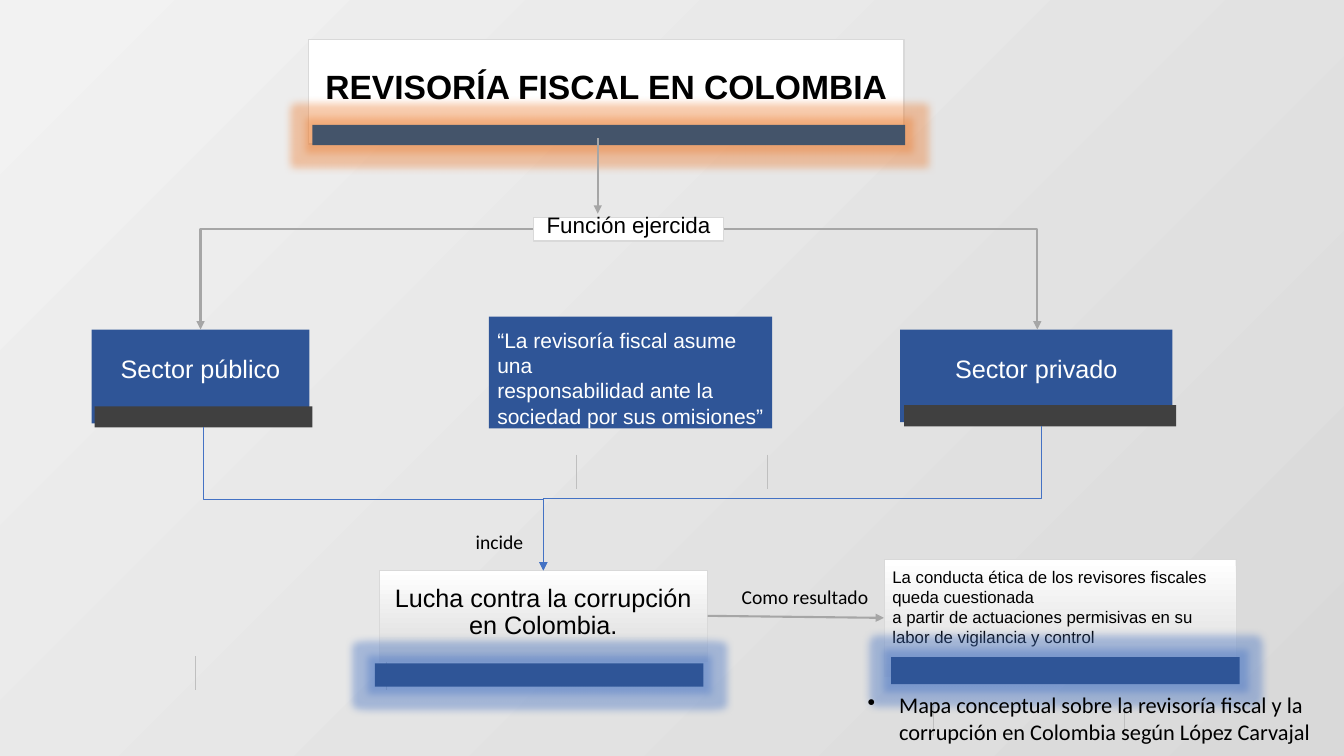
"""Concept map of statutory auditing and corruption in Colombia."""
from dataclasses import dataclass
from math import copysign
from typing import Optional

from lxml import etree
from pptx import Presentation
from pptx.dml import color as dml
from pptx.enum import shapes as kinds, text as txt
from pptx.oxml import ns
from pptx.util import Pt


@dataclass(frozen=True)
class Theme:
    white: str = "FFFFFF"
    black: str = "000000"
    pale: str = "D9D9D9"
    light: str = "F2F2F2"
    tick: str = "BFBFBF"
    arrow: str = "A6A6A6"
    blue: str = "2F5597"
    accent: str = "4472C4"
    orange: str = "ED7D31"
    slate: str = "44546A"
    dark: str = "404040"
    heading: str = "Arial"
    body: str = "Calibri"
    title_size: float = 24
    box_size: float = 18
    label_size: float = 16
    quote_size: float = 15
    note_size: float = 14
    detail_size: float = 12


THEME = Theme()


@dataclass(frozen=True)
class Box:
    place: tuple[float, float, float, float]
    lines: tuple[str, ...] = ()
    size: float = THEME.box_size
    fill: Optional[str] = None
    end_fill: Optional[str] = None
    outline: Optional[str] = None
    outline_width: float = 0.25
    color: str = THEME.black
    font: str = THEME.heading
    bold: bool = False
    centered: bool = True
    anchor: txt.MSO_ANCHOR = txt.MSO_ANCHOR.MIDDLE
    insets: tuple[float, float, float, float] = (6, 0.5, 6, 4.5)
    wrap: bool = True
    glow: Optional[str] = None


@dataclass(frozen=True)
class Link:
    start: tuple[float, float]
    end: tuple[float, float]
    color: str = THEME.arrow
    width: float = 1.5
    arrow: bool = True
    route: str = "straight"


TITLE = Box((220.3, 28.1, 425.5, 74.9), ("REVISORÍA FISCAL EN COLOMBIA",), THEME.title_size,
            THEME.white, outline=THEME.pale, outline_width=1, bold=True,
            insets=(0.5, 0.5, 0.5, 4.5))
FUNCTION = Box((380.9, 155.5, 136.1, 16.6), ("Función ejercida",), THEME.label_size,
               THEME.white, outline=THEME.pale, outline_width=1, insets=(0.5, 0.5, 0.5, 4.5))
FIGHT = Box((270.7, 407.5, 234.7, 64.8), ("Lucha contra la corrupción en Colombia.",),
            fill=THEME.white, end_fill=THEME.pale, outline=THEME.pale)
CONDUCT = Box((631.4, 399.6, 251.3, 83.5),
              ("La conducta ética de los revisores fiscales queda cuestionada",
               "a partir de actuaciones permisivas en su labor de vigilancia y control"),
              THEME.detail_size, THEME.white, THEME.pale, THEME.pale, centered=False,
              anchor=txt.MSO_ANCHOR.TOP, insets=(6, 5, 6, 4.5))
SECTOR = dict(fill=THEME.blue, color=THEME.white, insets=(6, 0, 6, 8.6))
NOTE = dict(font=THEME.body, centered=False, anchor=txt.MSO_ANCHOR.TOP,
            insets=(7.2, 3.6, 7.2, 3.6))
BOXES = (
    Box((223.2, 89.3, 423.4, 14.4), fill=THEME.slate, glow=THEME.orange),
    Box((643, 235.4, 194.4, 66.2), ("Sector privado",), **SECTOR),
    Box((645.8, 289.4, 194.4, 15.1), fill=THEME.dark),
    Box((65.5, 235.4, 155.5, 67), ("Sector público",), **SECTOR),
    Box((67.7, 290.2, 155.5, 15.1), fill=THEME.dark),
    Box((349.2, 226.1, 202.3, 79.9),
        ("“La revisoría fiscal asume una", "responsabilidad ante la sociedad por sus omisiones”"),
        THEME.quote_size, THEME.blue, color=THEME.white, centered=False,
        anchor=txt.MSO_ANCHOR.BOTTOM, insets=(6, 0, 6, 0)),
    Box((267.8, 473.8, 234.7, 16.6), fill=THEME.blue, glow=THEME.accent),
    Box((636.5, 469.4, 249.1, 19.4), fill=THEME.blue, glow=THEME.accent),
    Box((332.6, 375.1, 94.3, 24.5), ("incide",), THEME.note_size, **NOTE),
    Box((522.7, 414, 105.8, 24.5), ("Como resultado",), THEME.note_size, wrap=False, **NOTE),
)
CAPTION = Box((612.7, 490.3, 347, 46.1),
              ("Mapa conceptual sobre la revisoría fiscal y la corrupción en Colombia "
               "según López Carvajal",), THEME.label_size, **NOTE)
TICK_PAIRS = ((139.7, 468.7), (411.8, 324.7), (666.7, 501.1))
TICK_GAP, TICK_HEIGHT = 136.3, 24.3
LINKS = (
    Link((427, 98.6), (427, 152.6)),
    Link((380.9, 163.4), (143.3, 235.4), route="corner"),
    Link((517, 163.4), (740.9, 235.4), route="corner"),
    Link((145.4, 305.3), (388.1, 407.5), THEME.accent, 0.5, route="drop"),
    Link((743.8, 304.6), (388.1, 407.5), THEME.accent, 0.5, route="drop"),
)
RESULT = Link((505.4, 439.9), (631.4, 441.4))


def rgb(value: str) -> dml.RGBColor:
    return dml.RGBColor.from_string(value)


def add_xml(parent, tag: str, **attributes: str):
    return etree.SubElement(parent, ns.qn(tag), attributes)


def paint_gradient(fill, first: str, last: str, angle: float) -> None:
    fill.gradient()
    fill.gradient_angle = angle
    for stop, value in zip(fill.gradient_stops, (first, last)):
        stop.color.rgb = rgb(value)


def write_text(shape, box: Box) -> None:
    frame = shape.text_frame
    frame.auto_size = txt.MSO_AUTO_SIZE.NONE
    frame.word_wrap = box.wrap
    frame.vertical_anchor = box.anchor
    frame.margin_left, frame.margin_top, frame.margin_right, frame.margin_bottom = map(Pt, box.insets)
    frame.text = "\n".join(box.lines)
    for paragraph in frame.paragraphs:
        paragraph.alignment = txt.PP_ALIGN.CENTER if box.centered else txt.PP_ALIGN.LEFT
        paragraph.line_spacing = 0.9 if box.centered else 1.0
        paragraph.space_before = Pt(0)
        paragraph.space_after = Pt(round(box.size * 0.35, 1) if box.centered else 0)
        font = paragraph.font
        font.name, font.size, font.bold = box.font, Pt(box.size), box.bold
        font.color.rgb = rgb(box.color)


def format_box(shape, box: Box) -> None:
    shape.shadow.inherit = False
    if box.end_fill:
        paint_gradient(shape.fill, box.fill, box.end_fill, 270)
    else:
        shape.fill.solid()
        shape.fill.fore_color.rgb = rgb(box.fill)
    if box.outline:
        shape.line.color.rgb = rgb(box.outline)
        shape.line.width = Pt(box.outline_width)
    else:
        shape.line.fill.background()
    if box.glow:
        effects = shape._element.spPr.find(ns.qn("a:effectLst"))
        glow = add_xml(effects, "a:glow", rad=str(Pt(11)))
        add_xml(add_xml(glow, "a:srgbClr", val=box.glow), "a:alpha", val="40000")


def draw_box(slide, box: Box):
    place = map(Pt, box.place)
    if box.fill:
        shape = slide.shapes.add_shape(kinds.MSO_SHAPE.RECTANGLE, *place)
        format_box(shape, box)
    else:
        shape = slide.shapes.add_textbox(*place)
    if box.lines:
        write_text(shape, box)
    return shape


def draw_link(slide, link: Link):
    (x1, y1), (x2, y2) = link.start, link.end
    dx, dy = x2 - x1, y2 - y1
    if link.route == "drop":
        middle_x, middle_y = (x1 + x2) / 2, (y1 + y2) / 2
        half = copysign(dy / 2, dx)
        x1, x2 = middle_x + half, middle_x - half
        y1, y2 = middle_y - abs(dx) / 2, middle_y + abs(dx) / 2
    kind = kinds.MSO_CONNECTOR.STRAIGHT if link.route == "straight" else kinds.MSO_CONNECTOR.ELBOW
    connector = slide.shapes.add_connector(kind, Pt(x1), Pt(y1), Pt(x2), Pt(y2))
    connector.line.color.rgb = rgb(link.color)
    connector.line.width = Pt(link.width)
    properties = connector._element.spPr
    if link.route == "corner":
        properties.find(ns.qn("a:prstGeom")).set("prst", "bentConnector2")
    if link.route == "drop":
        properties.find(ns.qn("a:xfrm")).set("rot", str((270 if dx > 0 else 90) * 60000))
    if link.arrow:
        add_xml(properties.find(ns.qn("a:ln")), "a:tailEnd", type="triangle")
    add_xml(properties, "a:effectLst")
    return connector


def main() -> None:
    presentation = Presentation()
    presentation.slide_width, presentation.slide_height = Pt(960), Pt(540)
    slide = presentation.slides.add_slide(presentation.slide_layouts[5])
    paint_gradient(slide.background.fill, THEME.pale, THEME.light, 135)

    title = slide.shapes.title
    title.left, title.top, title.width, title.height = map(Pt, TITLE.place)
    format_box(title, TITLE)
    write_text(title, TITLE)

    for left, top in TICK_PAIRS:
        for x in (left, left + TICK_GAP):
            draw_link(slide, Link((x, top), (x, top + TICK_HEIGHT), THEME.tick, 0.25, False))
    draw_box(slide, FUNCTION)
    fight, conduct = draw_box(slide, FIGHT), draw_box(slide, CONDUCT)
    for box in BOXES:
        draw_box(slide, box)
    caption = draw_box(slide, CAPTION).text_frame.paragraphs[0]._p.get_or_add_pPr()
    caption.set("marL", str(Pt(22.5)))
    caption.set("indent", str(-Pt(22.5)))
    bullet = etree.Element(ns.qn("a:buChar"), char="•")
    caption.find(ns.qn("a:defRPr")).addprevious(bullet)
    for link in LINKS:
        draw_link(slide, link)
    result = draw_link(slide, RESULT)
    result.begin_connect(fight, 3)
    result.end_connect(conduct, 1)
    presentation.save("out.pptx")


if __name__ == "__main__":
    main()
